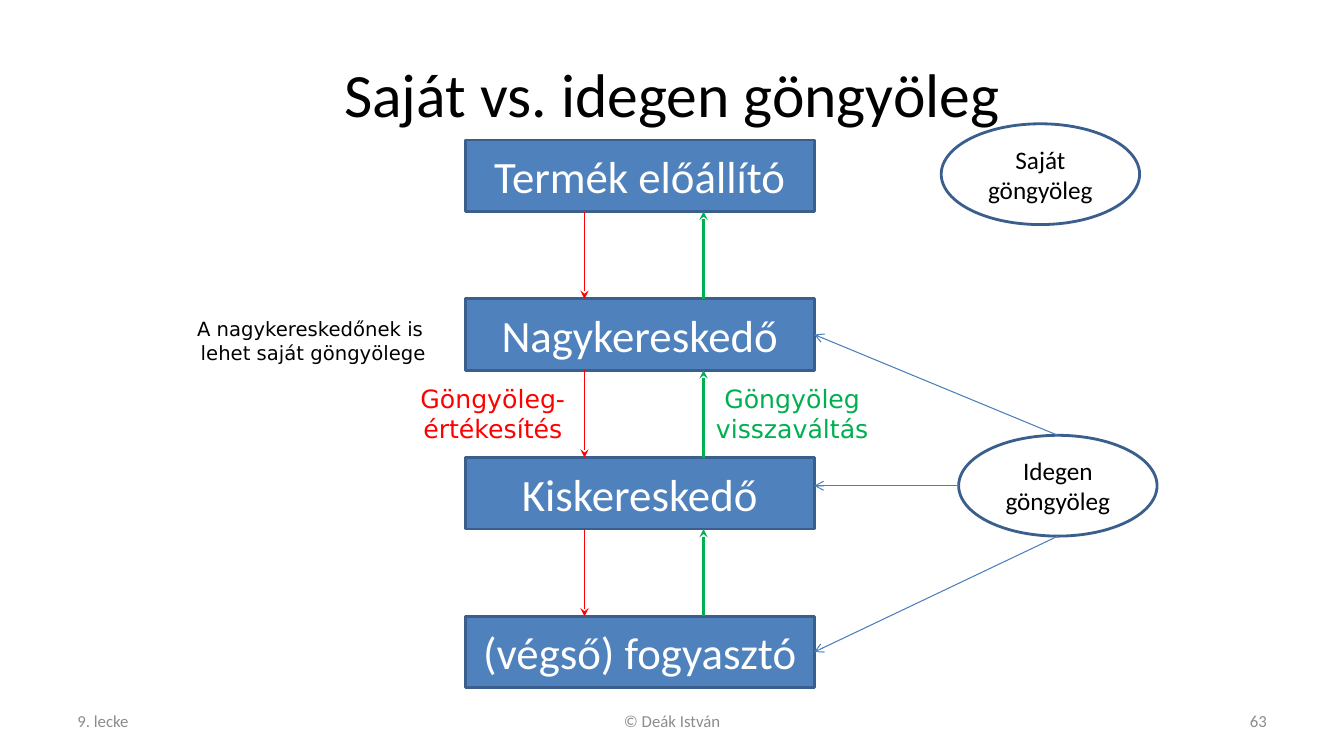
from lxml import etree
from pptx import Presentation
from pptx.dml.color import RGBColor
from pptx.enum.shapes import MSO_CONNECTOR, MSO_SHAPE
from pptx.enum.text import MSO_ANCHOR, MSO_AUTO_SIZE, PP_ALIGN
from pptx.oxml.ns import qn
from pptx.util import Cm, Pt

RECT, OVAL = MSO_SHAPE.RECTANGLE, MSO_SHAPE.OVAL
LINE = MSO_CONNECTOR.STRAIGHT
TOP, MIDDLE = MSO_ANCHOR.TOP, MSO_ANCHOR.MIDDLE
GROW = MSO_AUTO_SIZE.SHAPE_TO_FIT_TEXT
LEFT, MID, RIGHT = PP_ALIGN.LEFT, PP_ALIGN.CENTER, PP_ALIGN.RIGHT
RIGHT_SIDE = 3

COLORS = {
    "black": "000000",
    "white": "FFFFFF",
    "gray": "8C8C8C",
    "blue": "4F81BD",
    "edge": "3A5F8C",
    "link": "4B7EBC",
    "red": "FF0000",
    "green": "00B050",
}


def color(name):
    return RGBColor.from_string(COLORS[name])


def write(frame, text, size=18, ink="black", font="Calibri", align=MID, anchor=MIDDLE):
    frame.vertical_anchor = anchor
    for i, line in enumerate(text.split("\n")):
        para = frame.add_paragraph() if i else frame.paragraphs[0]
        para.alignment = align
        run = para.add_run()
        run.text = line
        run.font.size = Pt(size)
        run.font.name = font
        run.font.color.rgb = color(ink)


class Board:
    def __init__(self, slide):
        self.shapes = slide.shapes

    def text(self, text, x, y, w, h, **style):
        box = self.shapes.add_textbox(Cm(x), Cm(y), Cm(w), Cm(h))
        box.text_frame.word_wrap = True
        write(box.text_frame, text, **style)
        return box

    def label(self, text, x, y, w, h, **style):
        box = self.text(text, x, y, w, h, font="DejaVu Sans", anchor=TOP, **style)
        box.text_frame.word_wrap = False
        box.text_frame.auto_size = GROW

    def node(self, kind, text, x, y, w, h, fill=None, **style):
        shape = self.shapes.add_shape(kind, Cm(x), Cm(y), Cm(w), Cm(h))
        shape.shadow.inherit = False
        if fill:
            shape.fill.solid()
            shape.fill.fore_color.rgb = color(fill)
        else:
            shape.fill.background()
        shape.line.color.rgb = color("edge")
        shape.line.width = Pt(2)
        write(shape.text_frame, text, **style)
        return shape

    def arrow(self, x1, y1, x2, y2, ink, width=0.75, head="stealth"):
        line = self.shapes.add_connector(LINE, Cm(x1), Cm(y1), Cm(x2), Cm(y2))
        line.line.color.rgb = color(ink)
        line.line.width = Pt(width)
        etree.SubElement(line.line._get_or_add_ln(), qn("a:tailEnd"), type=head)
        etree.SubElement(line._element.spPr, qn("a:effectLst"))
        return line


def main():
    deck = Presentation()
    deck.slide_width, deck.slide_height = Cm(33.87), Cm(19.05)
    board = Board(deck.slides.add_slide(deck.slide_layouts[6]))

    board.text("Saját vs. idegen göngyöleg", 1.7, 0.76, 30.48, 3.18, size=44)
    for text, x, w, align in (
        ("9. lecke", 1.7, 7.9, LEFT),
        ("© Deák István", 11.58, 10.72, MID),
        ("63", 24.28, 7.9, RIGHT),
    ):
        board.text(text, x, 17.65, w, 1.01, size=12, ink="gray", align=align)

    left, top, wide, high, step = 11.73, 3.53, 8.79, 1.8, 4
    names = ("Termék előállító", "Nagykereskedő", "Kiskereskedő", "(végső) fogyasztó")
    chain = [
        board.node(RECT, name, left, top + i * step, wide, high, fill="blue", size=32, ink="white")
        for i, name in enumerate(names)
    ]
    for i in range(len(chain) - 1):
        upper = top + i * step + high
        lower = top + (i + 1) * step
        board.arrow(14.73, upper, 14.73, lower, "red")
        board.arrow(17.73, lower, 17.73, upper, "green", width=2)

    board.label("Göngyöleg-\nértékesítés", 10.31, 9.53, 4.22, 1.8, ink="red")
    board.label("Göngyöleg\nvisszaváltás", 17.78, 9.53, 4.37, 1.8, ink="green")
    board.label("A nagykereskedőnek is \nlehet saját göngyölege", 4.67, 7.87, 6.45, 1.45, size=14)

    x, y, w, h = 24.16, 10.97, 5, 2.54
    board.node(OVAL, "Saját\ngöngyöleg", 23.72, 3.12, w, h)
    board.node(OVAL, "Idegen\ngöngyöleg", x, y, w, h)
    side = left + wide
    for start, i in ((y, 1), (y + h, 3)):
        goal = top + i * step + high / 2
        link = board.arrow(x + w / 2, start, side, goal, "link", head="arrow")
        link.end_connect(chain[i], RIGHT_SIDE)
    board.arrow(x, y + h / 2, side, y + h / 2, "link", head="arrow")

    deck.save("out.pptx")


if __name__ == "__main__":
    main()
